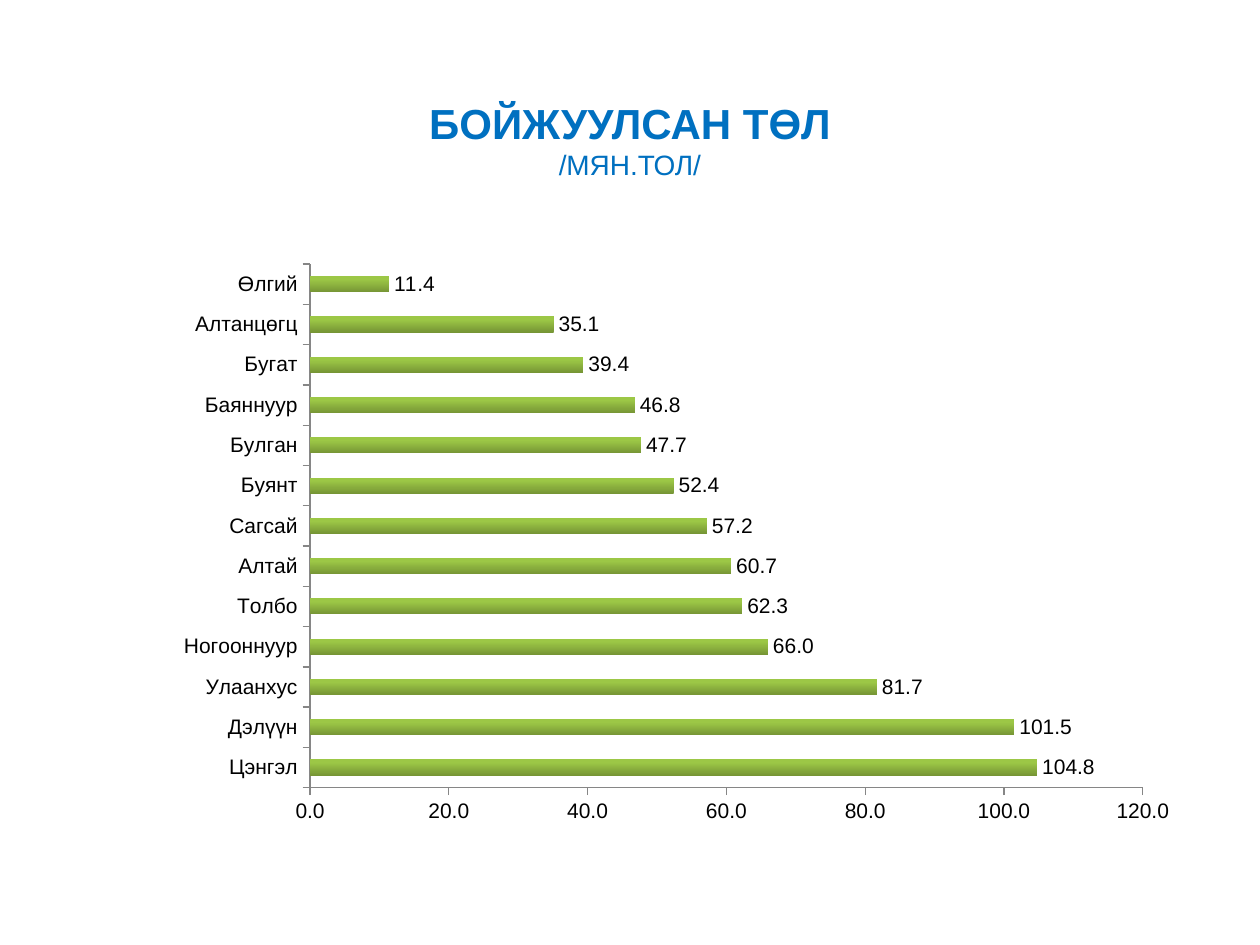
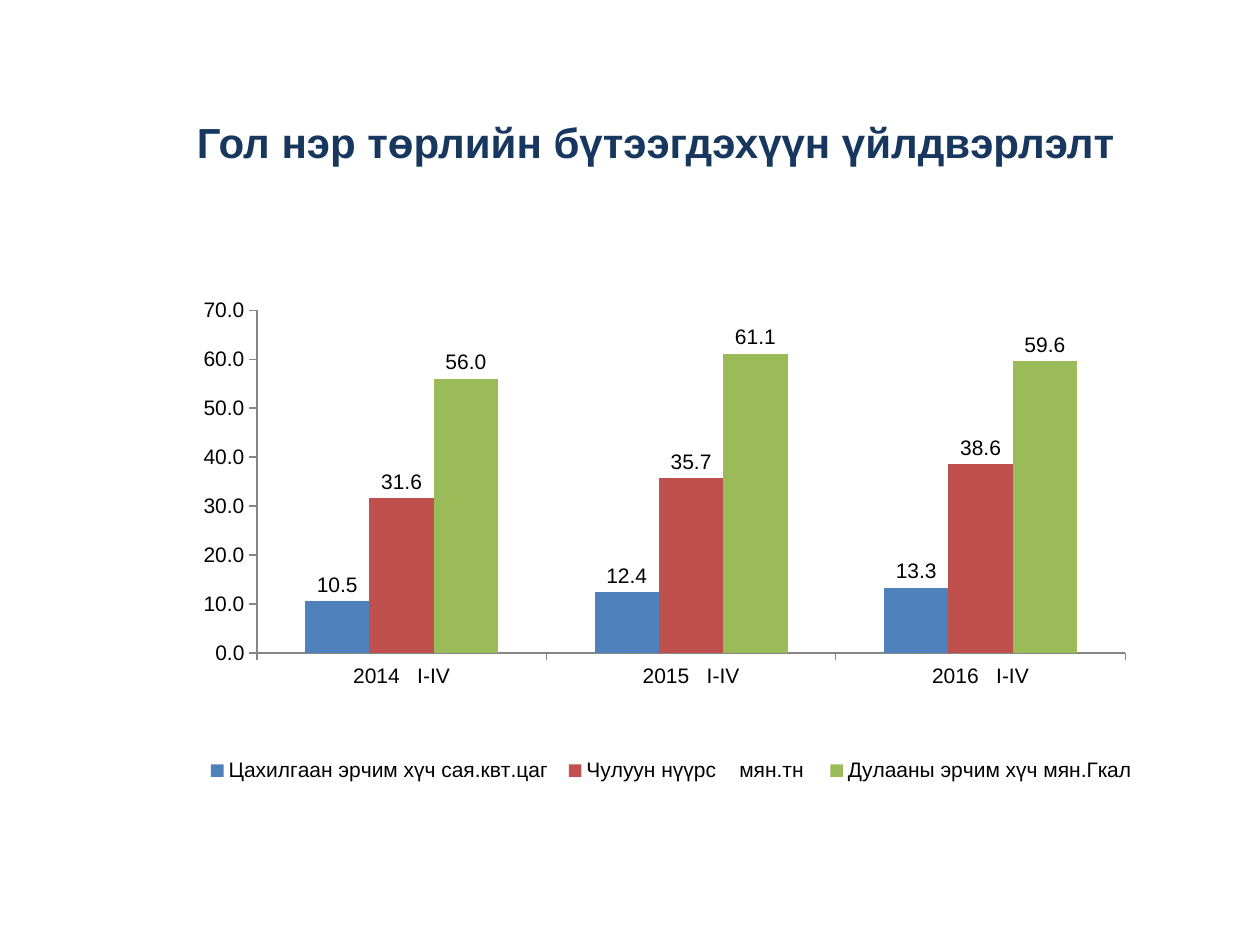
from lxml import etree
from pptx import Presentation
from pptx.chart.data import CategoryChartData
from pptx.dml.color import RGBColor
from pptx.enum.chart import XL_CHART_TYPE, XL_LABEL_POSITION, XL_LEGEND_POSITION, XL_TICK_MARK
from pptx.enum.text import MSO_ANCHOR, MSO_AUTO_SIZE, PP_ALIGN
from pptx.oxml.ns import qn
from pptx.util import Pt

PX = 9525
TITLE_ONLY = 5
BAR, COLUMN = XL_CHART_TYPE.BAR_CLUSTERED, XL_CHART_TYPE.COLUMN_CLUSTERED
OUTSIDE_END = XL_LABEL_POSITION.OUTSIDE_END
OUTSIDE = XL_TICK_MARK.OUTSIDE
FONT = "Arial"
NUMBER = "0.0"
BLACK, AXIS_GREY = "000000", "868686"
GREEN_GRADIENT = (("769535", 0), ("9CC746", 0.8))

# Title lines are (text, size, bold); a series colour is one hex or gradient stops.
SLIDES = [
    dict(
        title=[("БОЙЖУУЛСАН ТӨЛ", 24, True), ("/МЯН.ТОЛ/", 16, False)],
        title_color="0070C0", title_box=(48, 29, 864, 120),
        anchor=MSO_ANCHOR.BOTTOM, bottom_inset=11,
        kind=BAR, chart_box=(88, 168, 824, 475), plot=(0.18, 0.07, 0.77, 0.84),
        axis_max=120, axis_step=20, legend=None,
        categories=["Цэнгэл", "Дэлүүн", "Улаанхус", "Ногооннуур", "Толбо", "Алтай", "Сагсай",
                    "Буянт", "Булган", "Баяннуур", "Бугат", "Алтанцөгц", "Өлгий"],
        series=[("Series 1", GREEN_GRADIENT,
                 [104.8, 101.5, 81.7, 66, 62.3, 60.7, 57.2, 52.4, 47.7, 46.8, 39.4, 35.1, 11.4])],
    ),
    dict(
        title=[("Гол нэр төрлийн бүтээгдэхүүн үйлдвэрлэлт ", 24, True)],
        title_color="17375E", title_box=(96, 72, 816, 72),
        anchor=MSO_ANCHOR.MIDDLE, bottom_inset=5,
        kind=COLUMN, chart_box=(128, 216, 752, 408), plot=(0.09, 0.05, 0.88, 0.64),
        axis_max=70, axis_step=10, legend=(0.03, 0.87, 0.96, 0.08),
        categories=["2014   I-IV", "2015   I-IV", "2016   I-IV"],
        series=[("Цахилгаан эрчим хүч сая.квт.цаг", "4F81BD", [10.5, 12.4, 13.3]),
                ("Чулуун нүүрс    мян.тн ", "C0504D", [31.6, 35.7, 38.6]),
                ("Дулааны эрчим хүч мян.Гкал", "9BBB59", [56, 61.1, 59.6])],
    ),
]


def rgb(color):
    return RGBColor.from_string(color)


def px(box):
    return [v * PX for v in box]


def set_font(font, size, color, bold=False):
    font.name, font.size, font.bold = FONT, Pt(size), bold
    font.color.rgb = rgb(color)


def set_layout(parent, index, box, inner=False):
    """Place a plot area or legend by fractions of the chart."""
    old = parent.find(qn("c:layout"))
    if old is not None:
        parent.remove(old)
    layout = etree.Element(qn("c:layout"))
    manual = etree.SubElement(layout, qn("c:manualLayout"))
    settings = [("layoutTarget", "inner")] if inner else []
    settings += [("xMode", "edge"), ("yMode", "edge"), *zip("xywh", box)]
    for tag, value in settings:
        etree.SubElement(manual, qn(f"c:{tag}")).set("val", str(value))
    parent.insert(index, layout)


def add_title(slide, c):
    sp = slide.shapes.title
    sp.left, sp.top, sp.width, sp.height = px(c["title_box"])
    tf = sp.text_frame
    tf.word_wrap, tf.auto_size = True, MSO_AUTO_SIZE.NONE
    tf.vertical_anchor, tf.margin_bottom = c["anchor"], c["bottom_inset"] * PX
    p = tf.paragraphs[0]
    p.alignment = PP_ALIGN.CENTER
    for i, (text, size, bold) in enumerate(c["title"]):
        if i:
            p.add_line_break()
        r = p.add_run()
        r.text = text
        set_font(r.font, size, c["title_color"], bold)


def fill_series(fill, color):
    if isinstance(color, str):
        fill.solid()
        fill.fore_color.rgb = rgb(color)
        return
    fill.gradient()
    fill.gradient_angle = 90
    for stop, (shade, position) in zip(fill.gradient_stops, color):
        stop.color.rgb, stop.position = rgb(shade), position


def add_chart(slide, c):
    data = CategoryChartData(number_format=NUMBER)
    data.categories = c["categories"]
    for name, _, values in c["series"]:
        data.add_series(name, values)
    chart = slide.shapes.add_chart(c["kind"], *px(c["chart_box"]), data).chart
    chart.has_title = False
    set_font(chart.font, 12, BLACK)

    plot = chart.plots[0]
    plot.vary_by_categories, plot.gap_width, plot.overlap = False, 150, 0
    plot.has_data_labels = True
    labels = plot.data_labels
    labels.show_value, labels.position = True, OUTSIDE_END
    labels.number_format, labels.number_format_is_linked = NUMBER, False
    for series, (_, color, _) in zip(plot.series, c["series"]):
        fill_series(series.format.fill, color)
        series.invert_if_negative = False

    for axis in (chart.category_axis, chart.value_axis):
        axis.has_major_gridlines = False
        axis.major_tick_mark = OUTSIDE
        axis.format.line.color.rgb = rgb(AXIS_GREY)
        axis.format.line.width = Pt(0.75)
    values = chart.value_axis
    values.minimum_scale, values.maximum_scale, values.major_unit = 0, c["axis_max"], c["axis_step"]
    values.tick_labels.number_format, values.tick_labels.number_format_is_linked = NUMBER, False

    plot_area = chart.element.find(".//" + qn("c:plotArea"))
    set_layout(plot_area, 0, c["plot"], inner=True)
    chart.has_legend = c["legend"] is not None
    if chart.has_legend:
        chart.legend.position = XL_LEGEND_POSITION.BOTTOM
        chart.legend.include_in_layout = False
        set_layout(chart.element.find(".//" + qn("c:legend")), 1, c["legend"])


def main():
    prs = Presentation()
    prs.slide_width, prs.slide_height = px((960, 720))
    for content in SLIDES:
        slide = prs.slides.add_slide(prs.slide_layouts[TITLE_ONLY])
        add_title(slide, content)
        add_chart(slide, content)
    prs.save("out.pptx")


if __name__ == "__main__":
    main()
